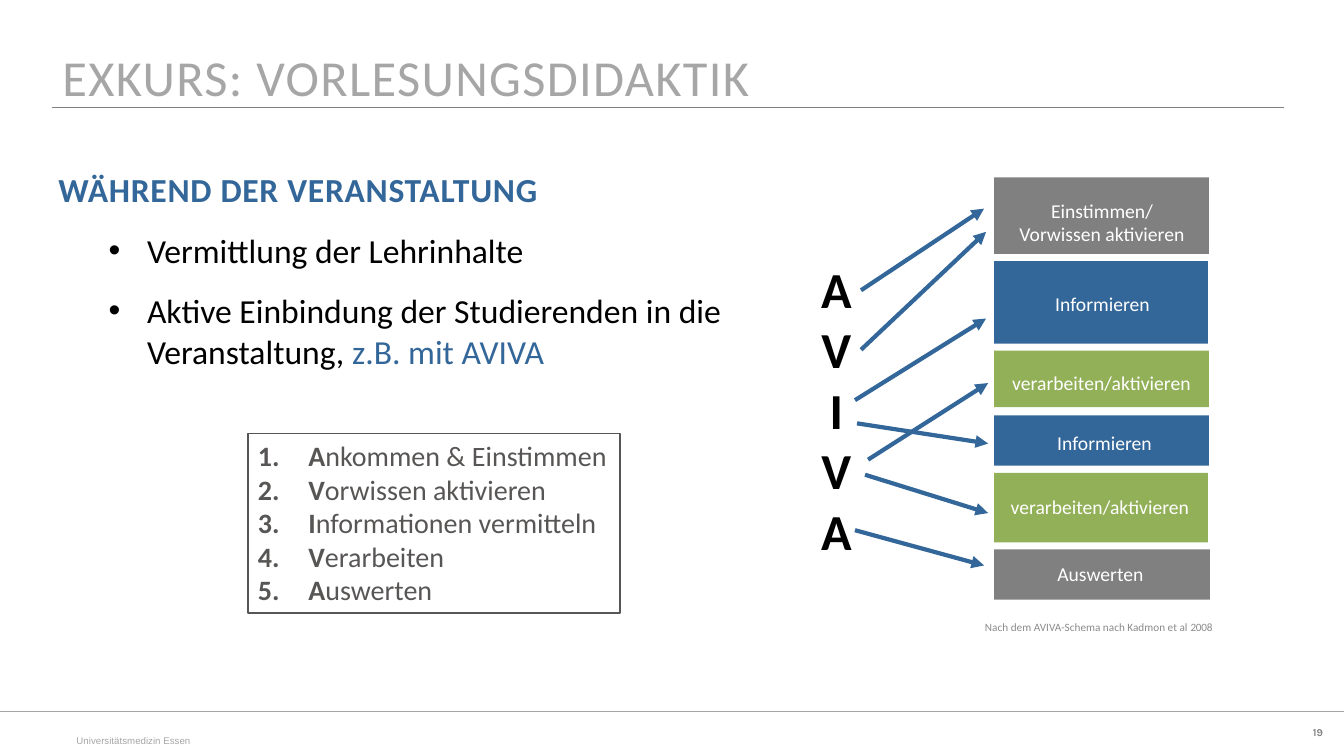
from lxml.etree import SubElement
from pptx import Presentation
from pptx.dml.color import RGBColor
from pptx.enum.shapes import MSO_CONNECTOR as Connector, MSO_SHAPE as Shape
from pptx.enum.text import MSO_ANCHOR as Anchor, PP_ALIGN as Align
from pptx.oxml.ns import qn
from pptx.util import Inches, Pt

COLORS = {
    "blue": "336699",
    "green": "92B058",
    "gray": "808080",
    "light": "A6A6A6",
    "caption": "8B8B8B",
    "dark": "585655",
    "black": "000000",
    "white": "FFFFFF",
}

PHASES = [
    (9.86, 1.76, 2.13, 0.76, "gray"),
    (9.86, 2.59, 2.12, 0.82, "blue"),
    (9.86, 3.48, 2.13, 0.56, "green"),
    (9.86, 4.12, 2.13, 0.5, "blue"),
    (9.86, 4.69, 2.12, 0.69, "green"),
    (9.86, 5.45, 2.14, 0.5, "gray"),
]

LABELS = [
    (10, 1.92, 1.86, 0.57, ["Einstimmen/", "Vorwissen aktivieren"]),
    (10.36, 2.85, 1.15, 0.34, ["Informieren"]),
    (9.92, 3.63, 2.01, 0.34, ["verarbeiten/aktivieren"]),
    (10.38, 4.23, 1.15, 0.34, ["Informieren"]),
    (9.91, 4.86, 2, 0.34, ["verarbeiten/aktivieren"]),
    (10.38, 5.53, 1.07, 0.34, ["Auswerten"]),
]

ARROWS = [
    (8.54, 2.88, 9.76, 2.07),
    (8.54, 3.47, 9.78, 2.3),
    (8.48, 3.97, 9.78, 3.16),
    (8.5, 4.2, 9.8, 4.4),
    (8.61, 4.56, 9.8, 3.8),
    (8.58, 4.71, 9.8, 5.09),
    (8.48, 5.26, 9.76, 5.61),
]

AVIVA_STEPS = [
    "Ankommen & Einstimmen",
    "Vorwissen aktivieren",
    "Informationen vermitteln",
    "Verarbeiten",
    "Auswerten",
]


def rgb(name):
    return RGBColor.from_string(COLORS[name])


def add_textbox(slide, left, top, width, height, wrap=True):
    box = slide.shapes.add_textbox(
        Inches(left), Inches(top), Inches(width), Inches(height))
    box.text_frame.word_wrap = wrap
    return box.text_frame


def add_paragraph(frame, align=Align.LEFT, line_spacing=1.0):
    first = frame.paragraphs[0]
    paragraph = frame.add_paragraph() if first.runs else first
    paragraph.alignment = align
    paragraph.line_spacing = line_spacing
    return paragraph


def add_run(paragraph, text, size, color, bold=False, font="Calibri", **attributes):
    run = paragraph.add_run()
    run.text = text
    run.font.name = font
    run.font.size = Pt(size)
    run.font.bold = bold
    run.font.color.rgb = rgb(color)
    for name, value in attributes.items():
        run.font._element.set(name, str(value))


def set_indent(paragraph, margin, indent, bullet=None, **bullet_attributes):
    properties = paragraph._p.get_or_add_pPr()
    properties.set("marL", str(Inches(margin)))
    properties.set("indent", str(Inches(indent)))
    if bullet:
        font = "Arial" if bullet == "buChar" else "Calibri"
        SubElement(properties, qn("a:buFont"), typeface=font)
        SubElement(properties, qn(f"a:{bullet}"), **bullet_attributes)


def add_rectangle(slide, left, top, width, height, fill=None, line=None):
    shape = slide.shapes.add_shape(
        Shape.RECTANGLE, Inches(left), Inches(top), Inches(width), Inches(height))
    shape.shadow.inherit = False
    if fill:
        shape.fill.solid()
        shape.fill.fore_color.rgb = rgb(fill)
    else:
        shape.fill.background()
    if line:
        shape.line.color.rgb = rgb(line)
        shape.line.width = Pt(1)
    else:
        shape.line.fill.background()
    return shape


def add_line(slide, x1, y1, x2, y2, color, width, arrow=False):
    line = slide.shapes.add_connector(
        Connector.STRAIGHT, Inches(x1), Inches(y1), Inches(x2), Inches(y2))
    line.line.color.rgb = rgb(color)
    line.line.width = Pt(width)
    if arrow:
        SubElement(line.line._get_or_add_ln(), qn("a:tailEnd"), type="triangle")
    SubElement(line._element.spPr, qn("a:effectLst"))


def add_centered_lines(slide, left, top, width, height, lines, size, color, bold=False):
    frame = add_textbox(slide, left, top, width, height, wrap=False)
    for text in lines:
        add_run(add_paragraph(frame, Align.CENTER), text, size, color, bold)


def add_footer(slide):
    number = add_textbox(slide, 12.42, 7.15, 0.8, 0.27)
    add_run(add_paragraph(number, Align.RIGHT), "19", 7.5, "gray", True, "Karla")
    add_line(slide, 0, 7.06, 13.33, 7.06, "light", 0.75)
    institution = add_textbox(slide, 0.66, 7.22, 1.52, 0.24, wrap=False)
    add_run(add_paragraph(institution), "Universitätsmedizin Essen", 12, "light",
            font="Arial", baseline=30000)


def add_title(slide):
    frame = add_textbox(slide, 0.52, 0.29, 12.21, 0.55)
    frame.margin_top = Inches(0.08)
    add_run(add_paragraph(frame, line_spacing=1.15), "EXKURS: VORLESUNGSDIDAKTIK",
            36, "light", spc=100)
    add_line(slide, 12.73, 1.07, 0.52, 1.07, "gray", 0.75)


def add_body(slide):
    frame = add_textbox(slide, 0.48, 1.55, 12.28, 2.65)
    add_run(add_paragraph(frame, line_spacing=1.2), "WÄHREND DER VERANSTALTUNG",
            24, "blue", True, spc=50)
    for text in ("Vermittlung der Lehrinhalte",
                 "Aktive Einbindung der Studierenden in die"):
        paragraph = add_paragraph(frame, line_spacing=1.5)
        paragraph.level = 1
        set_indent(paragraph, 0.88, -0.38, "buChar", char="•")
        add_run(paragraph, text, 24, "black")
    paragraph = add_paragraph(frame)
    paragraph.level = 1
    set_indent(paragraph, 0.88, 0)
    add_run(paragraph, "Veranstaltung, ", 24, "black")
    add_run(paragraph, "z.B. mit AVIVA", 24, "blue")


def add_aviva_list(slide):
    frame = add_rectangle(slide, 2.46, 4.3, 3.69, 1.78, line="dark").text_frame
    frame.word_wrap = True
    frame.vertical_anchor = Anchor.TOP
    for step in AVIVA_STEPS:
        paragraph = add_paragraph(frame)
        set_indent(paragraph, 0.5, -0.5, "buAutoNum", type="arabicPeriod")
        add_run(paragraph, step[0], 20, "dark", True)
        add_run(paragraph, step[1:], 20, "dark")


def add_aviva_diagram(slide):
    for *bounds, color in PHASES:
        add_rectangle(slide, *bounds, fill=color)
    for label in LABELS:
        add_centered_lines(slide, *label, 14, "white")
    add_centered_lines(slide, 8.04, 2.51, 0.51, 3.13, "AVIVA", 36, "black", True)
    for ends in ARROWS:
        add_line(slide, *ends, "blue", 3, arrow=True)
    caption = add_textbox(slide, 9.76, 6.14, 2.43, 0.15)
    caption.margin_left = caption.margin_right = caption.margin_bottom = 0
    caption.margin_top = Inches(0.01)
    paragraph = add_paragraph(caption)
    set_indent(paragraph, 0.01, 0)
    add_run(paragraph, "Nach dem AVIVA-Schema nach Kadmon et al ", 8, "caption")
    add_run(paragraph, "2008", 8, "caption", spc=-20)


def main():
    presentation = Presentation()
    presentation.slide_width = Inches(13.33)
    presentation.slide_height = Inches(7.5)
    slide = presentation.slides.add_slide(presentation.slide_layouts[6])
    add_footer(slide)
    add_title(slide)
    add_body(slide)
    add_aviva_diagram(slide)
    add_aviva_list(slide)
    presentation.save("out.pptx")


if __name__ == "__main__":
    main()
